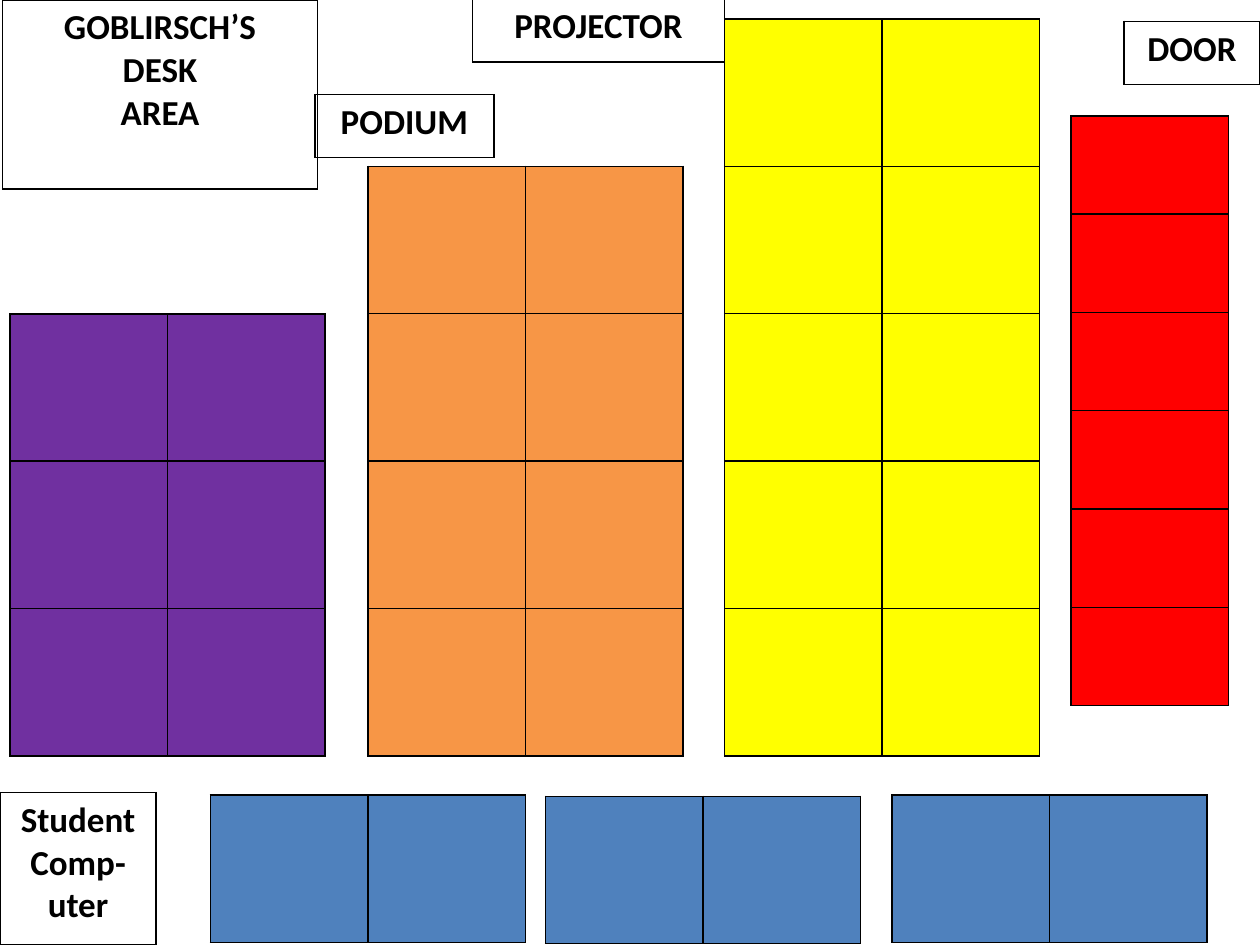
from lxml.etree import SubElement as Sub
from pptx import Presentation
from pptx.dml.color import RGBColor as Color
from pptx.enum.text import PP_ALIGN as Align
from pptx.oxml.ns import qn
from pptx.util import Inches, Pt

THEME = {
    "font": "Calibri", "size": 20, "ink": "000000", "line": 1,
    "red": "FF0000", "yellow": "FFFF00", "orange": "F79646",
    "purple": "7030A0", "blue": "4F81BD",
}
SEAT = 1.25
DEEP = 1.17
BASE = 6

SIDE = ("red", 8.5, 0.92, 6, 1, 0.78)
BLOCKS = [("yellow", 5.75, 5), ("orange", 2.92, 4), ("purple", 0.08, 3)]
BACK = [(7.08, 6.31), (1.67, 6.31), (4.33, 6.32)]
LABELS = [
    (["GOBLIRSCH’S", "DESK", "AREA"], 0.02, 0, 2.5, 1.5),
    (["Student", "Comp-", "uter"], 0, 6.29, 1.24, 1.21),
    (["DOOR"], 8.92, 0.17, 1.08, 0.5),
    (["PROJECTOR"], 3.75, -0.01, 2, 0.5),
    (["PODIUM"], 2.5, 0.75, 1.42, 0.5),
]


def edge(cell):
    props = cell._tc.get_or_add_tcPr()
    for spot, side in enumerate(("lnL", "lnR", "lnT", "lnB")):
        line = props.makeelement(qn(f"a:{side}"), {"w": str(Pt(THEME["line"]))})
        fill = Sub(line, qn("a:solidFill"))
        Sub(fill, qn("a:srgbClr"), val=THEME["ink"])
        props.insert(spot, line)


def grid(slide, left, top, rows, cols, wide, high, hue=None):
    frame = slide.shapes.add_table(
        rows, cols, Inches(left), Inches(top),
        Inches(wide * cols), Inches(high * rows))
    table = frame.table
    table.first_row = table.horz_banding = False
    for col in table.columns:
        col.width = Inches(wide)
    for row in table.rows:
        row.height = Inches(high)
    for cell in table.iter_cells():
        if hue:
            cell.fill.solid()
            cell.fill.fore_color.rgb = Color.from_string(THEME[hue])
        else:
            cell.fill.background()
        edge(cell)
    return table


def write(frame, lines, *, size=THEME["size"], hue="ink", bold=True, align=Align.CENTER):
    frame.text = "\n".join(lines)
    for para in frame.paragraphs:
        para.alignment = align
        for run in para.runs:
            font = run.font
            font.name = THEME["font"]
            font.size = Pt(size)
            font.bold = bold
            font.color.rgb = Color.from_string(THEME[hue])


def main():
    """Build the classroom seating plan."""
    deck = Presentation()
    deck.slide_width, deck.slide_height = Inches(10), Inches(7.5)
    slide = deck.slides.add_slide(deck.slide_layouts[6])
    hue, left, top, rows, cols, high = SIDE
    grid(slide, left, top, rows, cols, SEAT, high, hue)
    for hue, left, rows in BLOCKS:
        grid(slide, left, BASE - rows * DEEP, rows, 2, SEAT, DEEP, hue)
    for left, top in BACK:
        grid(slide, left, top, 1, 2, SEAT, DEEP, "blue")
    for lines, left, top, wide, high in LABELS:
        table = grid(slide, left, top, 1, 1, wide, high)
        write(table.cell(0, 0).text_frame, lines)
    deck.save("out.pptx")


if __name__ == "__main__":
    main()
